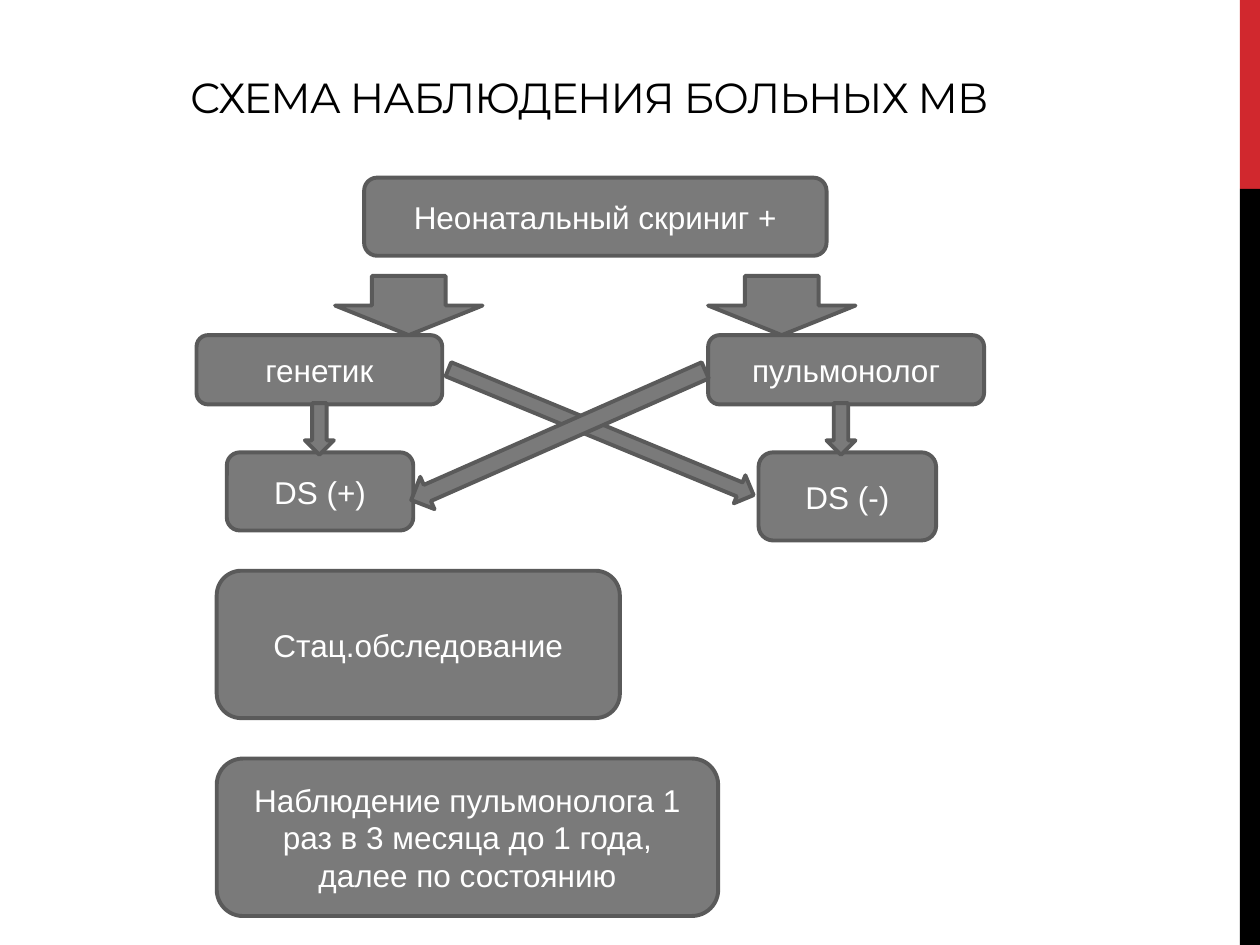
from pptx import Presentation
from pptx.dml.color import RGBColor
from pptx.enum.shapes import MSO_SHAPE
from pptx.enum.text import MSO_ANCHOR, PP_ALIGN
from pptx.util import Inches, Pt

RECTANGLE = MSO_SHAPE.RECTANGLE
ROUNDED = MSO_SHAPE.ROUNDED_RECTANGLE
DOWN_ARROW = MSO_SHAPE.DOWN_ARROW
LEFT, CENTER = PP_ALIGN.LEFT, PP_ALIGN.CENTER
MIDDLE, BOTTOM = MSO_ANCHOR.MIDDLE, MSO_ANCHOR.BOTTOM

RED = RGBColor(0xD1, 0x28, 0x2E)
BLACK = RGBColor(0, 0, 0)
WHITE = RGBColor(0xFF, 0xFF, 0xFF)
GRAY = RGBColor(0x7A, 0x7A, 0x7A)
DARK_GRAY = RGBColor(0x5A, 0x5A, 0x5A)

# Text, left, top, width, height
STEPS = [
    ("Неонатальный скриниг +", 2.89, 1.41, 3.67, 0.62),
    ("генетик", 1.56, 2.66, 1.95, 0.55),
    ("пульмонолог", 5.62, 2.66, 2.19, 0.55),
    ("DS (-)", 6.02, 3.59, 1.41, 0.7),
    ("DS (+)", 1.8, 3.59, 1.48, 0.62),
    ("Стац.обследование", 1.72, 4.53, 3.2, 1.17),
    ("Наблюдение пульмонолога 1 раз в 3 месяца до 1 года, далее по состоянию",
     1.72, 6.02, 3.98, 1.25),
]

# Left, top, width, height, rotation
ARROWS = [
    (2.66, 2.19, 1.17, 0.47, 0),
    (5.62, 2.19, 1.17, 0.47, 0),
    (4.65, 2.12, 0.24, 2.62, 292.4),
    (4.29, 2.18, 0.28, 2.55, 66.2),
    (2.42, 3.2, 0.23, 0.41, 0),
    (6.56, 3.2, 0.23, 0.41, 0),
]


def write_text(shape, text, *, font="Arial", size=18, color=WHITE,
               align=CENTER, anchor=MIDDLE, spacing=None):
    frame = shape.text_frame
    frame.word_wrap = True
    frame.vertical_anchor = anchor
    para = frame.paragraphs[0]
    para.alignment = align
    span = para.add_run()
    span.text = text
    span.font.name = font
    span.font.size = Pt(size)
    span.font.color.rgb = color
    if spacing is not None:
        # Letter spacing is stored in hundredths of a point
        span.font._element.set("spc", str(round(spacing * 100)))


def add_figure(page, kind, left, top, width, height, fill=GRAY, line=DARK_GRAY):
    figure = page.shapes.add_shape(
        kind, Inches(left), Inches(top), Inches(width), Inches(height))
    figure.shadow.inherit = False
    figure.fill.solid()
    figure.fill.fore_color.rgb = fill
    if line is None:
        figure.line.fill.background()
    else:
        figure.line.color.rgb = line
        figure.line.width = Pt(2.25)
    return figure


def add_step(page, text, *place):
    write_text(add_figure(page, ROUNDED, *place), text)


def add_arrow(page, left, top, width, height, rotation):
    arrow = add_figure(page, DOWN_ARROW, left, top, width, height)
    arrow.rotation = rotation


def set_title(page, text):
    title = page.shapes.title
    title.left, title.top = Inches(1.41), Inches(0)
    title.width, title.height = Inches(7.31), Inches(1.02)
    write_text(title, text, font="Montserrat", size=24, color=BLACK,
               align=LEFT, anchor=BOTTOM, spacing=-0.6)


def main():
    deck = Presentation()
    deck.slide_width, deck.slide_height = Inches(10), Inches(7.5)
    page = deck.slides.add_slide(deck.slide_layouts[5])

    # Side band
    add_figure(page, RECTANGLE, 9.84, 0, 0.16, 1.5, fill=RED, line=None)
    add_figure(page, RECTANGLE, 9.84, 1.5, 0.16, 6, fill=BLACK, line=None)

    set_title(page, "СХЕМА НАБЛЮДЕНИЯ БОЛЬНЫХ МВ")

    # Flow chart: steps first, arrows over them
    for step in STEPS:
        add_step(page, *step)
    for arrow in ARROWS:
        add_arrow(page, *arrow)

    deck.save("out.pptx")


if __name__ == "__main__":
    main()
